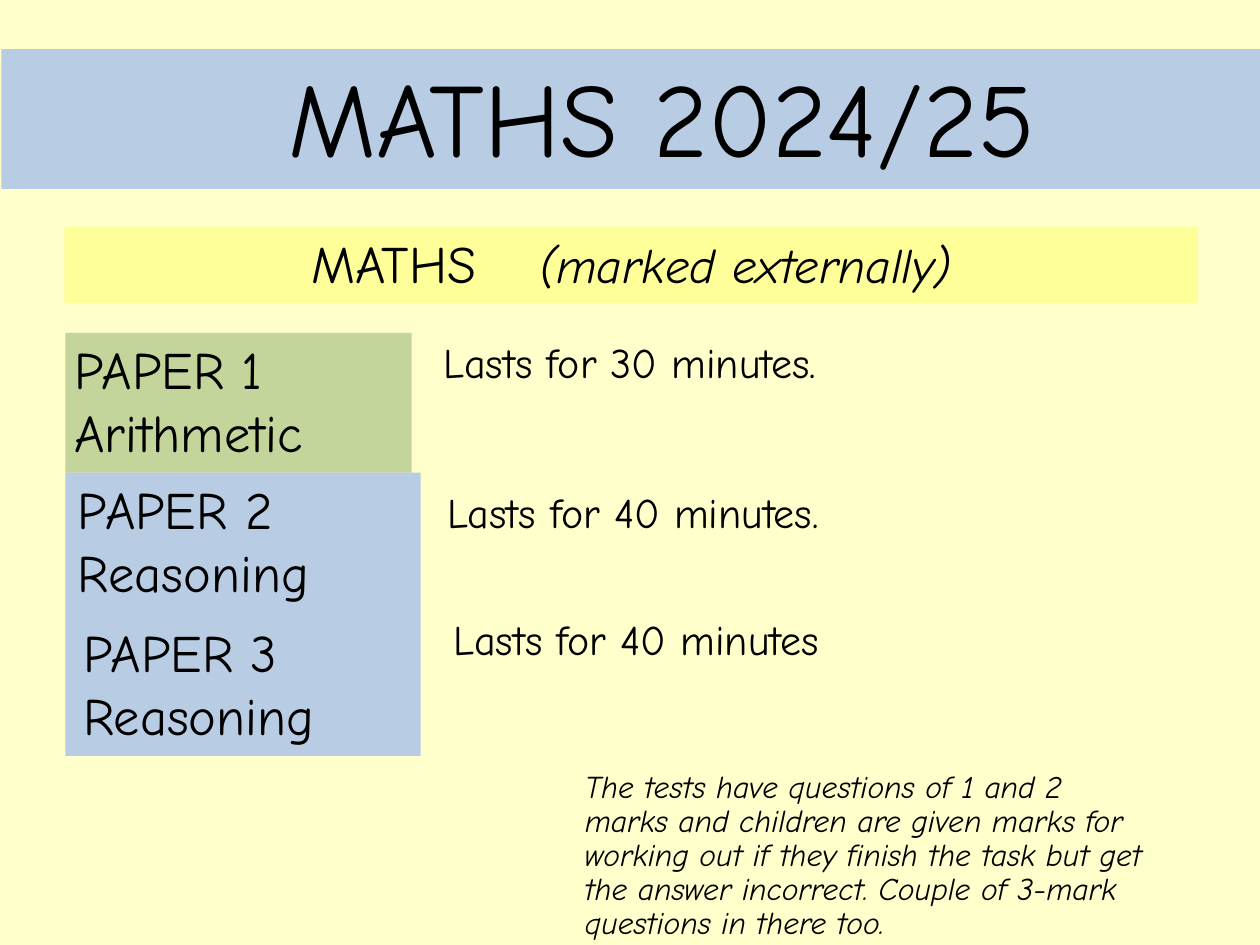
import pptx
import pptx.dml.color
import pptx.enum.shapes
import pptx.enum.text
import pptx.oxml.ns
import pptx.util
from lxml import etree
from pptx.util import Cm, Pt

FONT = "Comic Neue"
HUES = {"page": "FFFFCC", "blue": "B8CDE4", "yellow": "FFFF99",
        "green": "C3D59B", "ink": "000000"}
LEFT = pptx.enum.text.PP_ALIGN.LEFT
MID = pptx.enum.text.PP_ALIGN.CENTER


def hue(name):
    return pptx.dml.color.RGBColor.from_string(HUES[name])


def apply(obj, vals):
    for key, val in vals.items():
        setattr(obj, key, val)


def add_box(slide, area, fill=None):
    """Add a filled rectangle, or a bare text box when no fill is given."""
    place = [Cm(n) for n in area]
    if fill is None:
        return slide.shapes.add_textbox(*place)
    rect = pptx.enum.shapes.MSO_SHAPE.RECTANGLE
    box = slide.shapes.add_shape(rect, *place)
    box.shadow.inherit = False
    box.fill.solid()
    box.fill.fore_color.rgb = hue(fill)
    box.line.fill.background()
    return box


def write(box, paras, top):
    """Fill a box with paragraphs, each a pair of runs and format values."""
    frame = box.text_frame
    apply(frame, {"word_wrap": True, "margin_left": 0, "margin_right": 0,
                  "margin_top": Cm(top), "margin_bottom": 0,
                  "vertical_anchor": pptx.enum.text.MSO_ANCHOR.TOP})
    for i, (runs, vals) in enumerate(paras):
        para = frame.add_paragraph() if i else frame.paragraphs[0]
        apply(para, {"alignment": LEFT, **vals})
        for text, size, slant in runs:
            run = para.add_run()
            run.text = text
            apply(run.font, {"name": FONT, "size": Pt(size), "italic": slant})
            run.font.color.rgb = hue("ink")


def indent(para, left):
    para._p.get_or_add_pPr().set("marL", str(Cm(left)))


def add_tab(para, stop):
    name = pptx.oxml.ns.qn
    tabs = etree.SubElement(para._p.get_or_add_pPr(), name("a:tabLst"))
    etree.SubElement(tabs, name("a:tab"), pos=str(Cm(stop)), algn="l")


def add_card(slide, area, fill, papers):
    """Add a card of papers, each a number, topic, indent and space before."""
    box = add_box(slide, area, fill)
    paras = []
    for num, topic, left, gap in papers:
        paras.append(([(f"PAPER {num}", 30, False)], {"space_before": Pt(gap)}))
        paras.append(([(topic, 30, False)], {"space_before": Pt(0)}))
    write(box, paras, 0.08)
    for i, para in enumerate(box.text_frame.paragraphs):
        indent(para, papers[i // 2][2])


def add_line(slide, area, text, size, top, vals, left=0.03, slant=False):
    box = add_box(slide, area)
    write(box, [([(text, size, slant)], vals)], top)
    indent(box.text_frame.paragraphs[0], left)


def main():
    deck = pptx.Presentation()
    apply(deck, {"slide_width": Cm(25.4), "slide_height": Cm(19.05)})
    slide = deck.slides.add_slide(deck.slide_layouts[6])
    slide.background.fill.solid()
    slide.background.fill.fore_color.rgb = hue("page")

    add_box(slide, (0.03, 0.99, 25.37, 2.82), "blue")
    add_line(slide, (2.11, 0.58, 21.18, 3.07), "MATHS 2024/25", 60, 0.48,
             {"space_before": Pt(1)}, left=3.71)

    band = add_box(slide, (1.3, 4.57, 22.85, 1.55), "yellow")
    runs = [("MATHS\t", 30, False), ("(marked externally)", 28, True)]
    write(band, [(runs, {"alignment": MID, "space_before": Pt(2.1)})], 0.08)
    add_tab(band.text_frame.paragraphs[0], 4.6)

    add_card(slide, (1.32, 6.71, 6.98, 2.82), "green",
             [(1, "Arithmetic", 0.18, 2.1)])
    add_card(slide, (1.32, 9.53, 7.16, 5.71), "blue",
             [(2, "Reasoning", 0.25, 1.9), (3, "Reasoning", 0.36, 10.1)])

    for left, top, text in [(8.92, 6.76, "Lasts for 30 minutes."),
                            (8.99, 9.78, "Lasts for 40 minutes."),
                            (9.12, 12.34, "Lasts for 40 minutes")]:
        add_line(slide, (left, top, 8.5, 1.09), text, 24, 0.03,
                 {"space_before": Pt(1)})

    note = ("The tests have questions of 1 and 2 marks and children are given "
            "marks for working out if they finish the task but get the answer "
            "incorrect. Couple of 3-mark questions in there too.")
    add_line(slide, (11.76, 15.44, 11.4, 3.58), note, 18, 0.1,
             {"space_before": Pt(3.1), "line_spacing": 0.9}, slant=True)
    deck.save("out.pptx")


if __name__ == "__main__":
    main()
